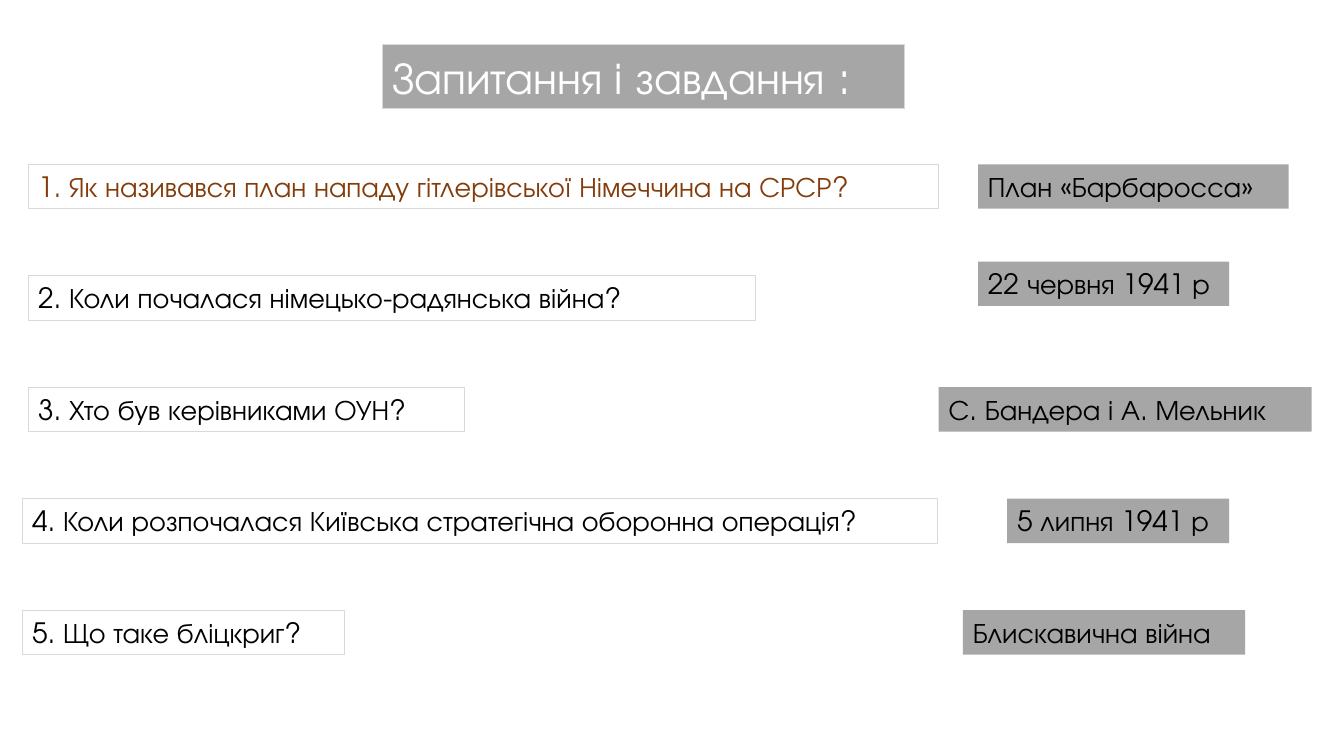
import pptx
import pptx.util
import pptx.dml.color
import pptx.enum.text
from dataclasses import dataclass


@dataclass(frozen=True)
class Theme:
    font: str = "TeX Gyre Adventor"
    title_size: int = 32
    body_size: int = 20
    panel: str = "A6A6A6"
    border: str = "D9D9D9"
    light: str = "FFFFFF"
    dark: str = "000000"
    accent: str = "843C0B"


THEME = Theme()
SLIDE_W, SLIDE_H = 13.33, 7.5
TITLE_BOX = (3.79, 0.44, 5.18, 0.64)
QUIZ_BOX = (0.22, 1.63, 12.79, 5.53)
BAR_H = 0.44

# Question, its indent and width, colour; answer, its indent, width and vertical shift
QUIZ = [
    ("1. Як називався план нападу гітлерівської Німеччина на СРСР?", 0.06, 9.03, THEME.accent,
     "План «Барбаросса»", 9.48, 3.08, 0),
    ("2. Коли почалася німецько-радянська війна?", 0.06, 7.21, THEME.dark,
     "22 червня 1941 р", 9.48, 2.49, -0.14),
    ("3. Хто був керівниками ОУН?", 0.06, 4.33, THEME.dark,
     "С. Бандера і А. Мельник", 9.09, 3.7, 0),
    ("4. Коли розпочалася Київська стратегічна оборонна операція?", 0, 9.08, THEME.dark,
     "5 липня 1941 р", 9.77, 2.2, 0),
    ("5. Що таке бліцкриг?", 0, 3.2, THEME.dark,
     "Блискавична війна", 9.33, 2.8, 0),
]


def rgb(code):
    return pptx.dml.color.RGBColor.from_string(code)


def add_label(s, box, text, size, color, fill=None, border=None):
    tb = s.shapes.add_textbox(*(pptx.util.Inches(v) for v in box))
    if fill:
        tb.fill.solid()
        tb.fill.fore_color.rgb = rgb(fill)
    if border:
        tb.line.color.rgb = rgb(border)
        tb.line.width = pptx.util.Pt(0.75)
    tf = tb.text_frame
    tf.word_wrap = True
    tf.auto_size = pptx.enum.text.MSO_AUTO_SIZE.NONE
    tf.text = text
    font = tf.paragraphs[0].runs[0].font
    font.name = THEME.font
    font.size = pptx.util.Pt(size)
    font.color.rgb = rgb(color)


def add_title(s, box):
    add_label(s, box, "Запитання і завдання :", THEME.title_size, THEME.light,
              THEME.panel, THEME.border)


def add_quiz(s, box):
    """Place each question on the left and its answer on the right, one pair per row."""
    left, top, _, height = box
    pitch = height / len(QUIZ)
    for i, (question, q_x, q_w, color, answer, a_x, a_w, shift) in enumerate(QUIZ):
        y = top + i * pitch
        add_label(s, (left + q_x, y, q_w, BAR_H), question, THEME.body_size, color,
                  border=THEME.border)
        add_label(s, (left + a_x, y + shift, a_w, BAR_H), answer, THEME.body_size,
                  THEME.dark, fill=THEME.panel)


def main():
    prs = pptx.Presentation()
    prs.slide_width = pptx.util.Inches(SLIDE_W)
    prs.slide_height = pptx.util.Inches(SLIDE_H)
    s = prs.slides.add_slide(prs.slide_layouts[6])
    add_title(s, TITLE_BOX)
    add_quiz(s, QUIZ_BOX)
    prs.save("out.pptx")


if __name__ == "__main__":
    main()
